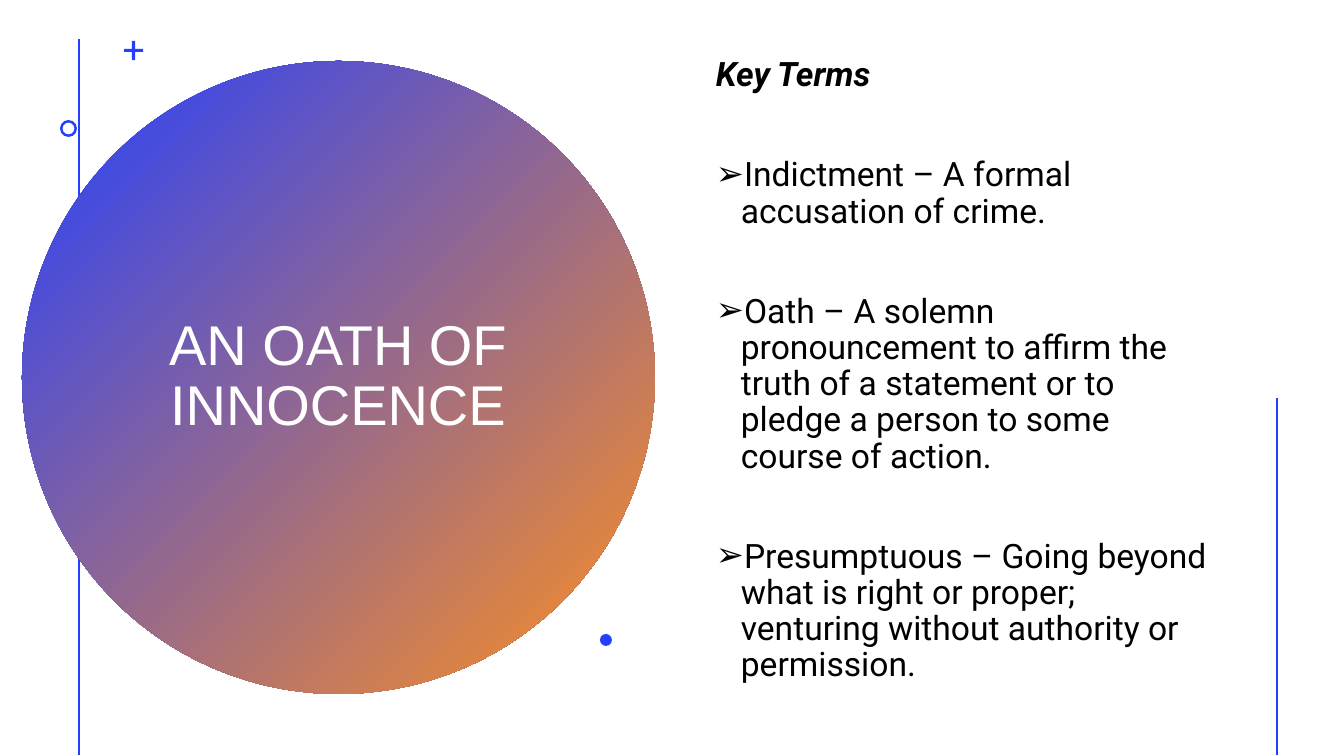
from lxml import etree
from pptx import Presentation
from pptx.dml.color import RGBColor
from pptx.enum.shapes import MSO_CONNECTOR, MSO_SHAPE
from pptx.enum.text import MSO_ANCHOR, PP_ALIGN
from pptx.oxml.ns import qn
from pptx.util import Emu, Pt

OVAL, DONUT, CROSS = MSO_SHAPE.OVAL, MSO_SHAPE.DONUT, MSO_SHAPE.CROSS
STRAIGHT = MSO_CONNECTOR.STRAIGHT
MIDDLE = MSO_ANCHOR.MIDDLE
LEFT, CENTER = PP_ALIGN.LEFT, PP_ALIGN.CENTER

BLUE = RGBColor(0x24, 0x3F, 0xFF)
ORANGE = RGBColor(0xFF, 0x90, 0x22)
WHITE = RGBColor(0xFF, 0xFF, 0xFF)
BLACK = RGBColor(0, 0, 0)

WIDTH, HEIGHT = 1344, 756
SCALE = 12192000 / WIDTH


def px(n):
    return Emu(round(n * SCALE))


class Slide:
    """The current slide and the style of its elements."""
    title_font, body_font = "Arial", "Roboto"
    line_spacing = 0.9
    term_gap = Pt(45.5)
    bullet_indent = 25

    def __init__(self, prs):
        self.s = prs.slides.add_slide(prs.slide_layouts[6])

    def rule(self, x, top, bottom):
        c = self.s.shapes.add_connector(STRAIGHT, px(x), px(top), px(x), px(bottom))
        c.line.color.rgb = BLUE
        c.line.width = Pt(2)
        etree.SubElement(c._element.spPr, qn("a:effectLst"))

    def shape(self, kind, x, y, size, adjust=None):
        sp = self.s.shapes.add_shape(kind, px(x), px(y), px(size), px(size))
        sp.shadow.inherit = False
        sp.line.fill.background()
        sp.fill.solid()
        sp.fill.fore_color.rgb = BLUE
        if adjust is not None:
            sp.adjustments[0] = adjust
        return sp

    def gradient_circle(self, x, y, size):
        fill = self.shape(OVAL, x, y, size).fill
        fill.gradient()
        fill.gradient_angle = 315
        for stop, position, color in zip(fill.gradient_stops, (0, 1), (BLUE, ORANGE)):
            stop.position = position
            stop.color.rgb = color

    def text_box(self, x, y, w, h):
        tf = self.s.shapes.add_textbox(px(x), px(y), px(w), px(h)).text_frame
        tf.word_wrap = True
        tf.vertical_anchor = MIDDLE
        return tf

    def add_text(self, p, text, font, size, color, align=LEFT, strong=False):
        p.alignment = align
        p.line_spacing = self.line_spacing
        r = p.add_run()
        r.text = text
        r.font.name = font
        r.font.size = Pt(size)
        r.font.color.rgb = color
        r.font.bold = r.font.italic = strong

    def title(self, text, x, y, w, h):
        tf = self.text_box(x, y, w, h)
        self.add_text(tf.paragraphs[0], text, self.title_font, 40, WHITE, CENTER)

    def bullet(self, p):
        pPr = p._p.get_or_add_pPr()
        indent = px(self.bullet_indent)
        pPr.set("marL", str(indent))
        pPr.set("indent", str(-indent))
        etree.SubElement(pPr, qn("a:buFont")).set("typeface", "Arial")
        etree.SubElement(pPr, qn("a:buChar")).set("char", "➢")

    def glossary(self, heading, terms, x, y, w, h):
        tf = self.text_box(x, y, w, h)
        self.add_text(tf.paragraphs[0], heading, self.body_font, 24, BLACK, strong=True)
        for term in terms:
            p = tf.add_paragraph()
            self.bullet(p)
            p.space_before = self.term_gap
            self.add_text(p, term, self.body_font, 24, BLACK)


TERMS = [
    "Indictment – A formal accusation of crime.",
    "Oath – A solemn pronouncement to affirm the truth of a statement "
    "or to pledge a person to some course of action.",
    "Presumptuous – Going beyond what is right or proper; "
    "venturing without authority or permission.",
]


def main():
    prs = Presentation()
    prs.slide_width, prs.slide_height = px(WIDTH), px(HEIGHT)
    slide = Slide(prs)

    # Title circle, with the left rule behind it
    slide.rule(79, 39, 755)
    slide.gradient_circle(22, 61, 633)
    slide.title("AN OATH OF INNOCENCE", 137, 142, 402, 471)

    # Small ornaments
    slide.shape(CROSS, 124, 41, 19, 0.42)
    slide.shape(DONUT, 60, 120, 17, 0.15)
    slide.shape(OVAL, 600, 634, 12)

    # Key terms and the right rule
    slide.glossary("Key Terms", TERMS, 706, 42, 516, 658)
    slide.rule(1277, 398, 755)

    prs.save("out.pptx")


if __name__ == "__main__":
    main()
